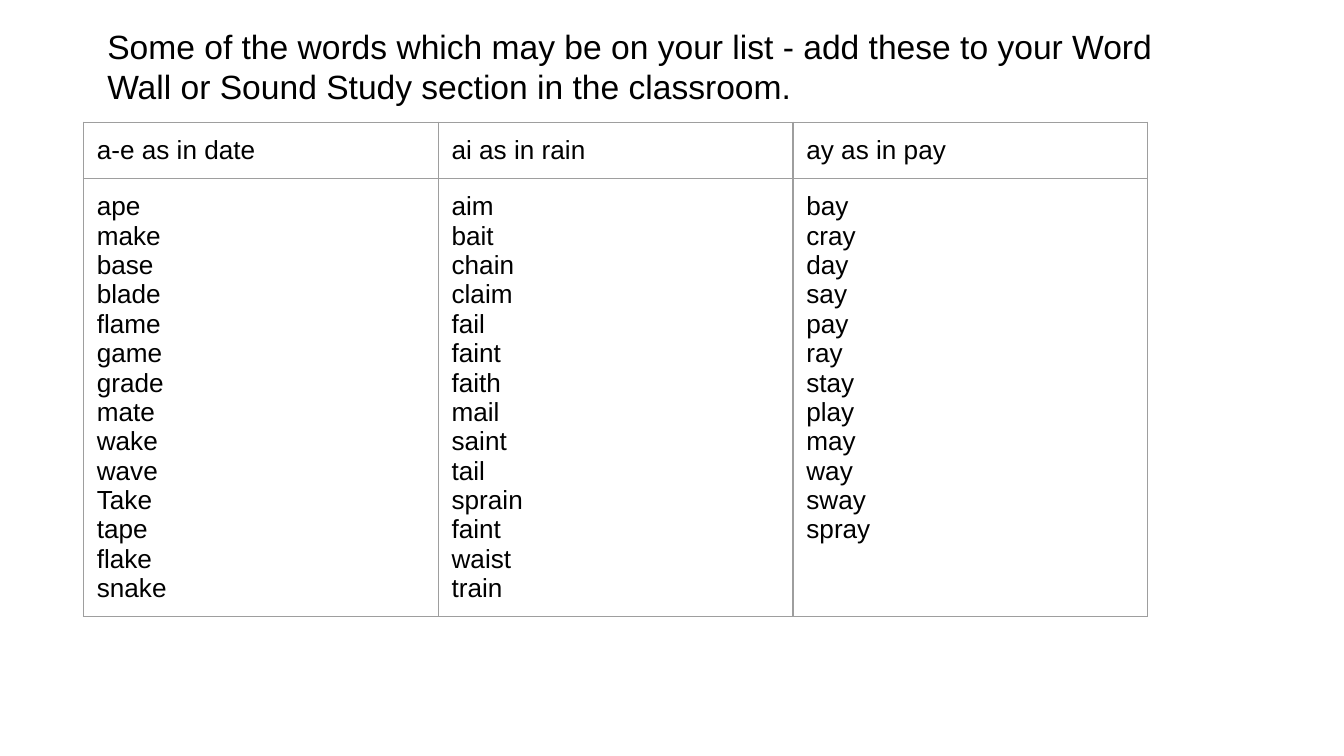
from lxml import etree
from pptx import Presentation
from pptx import util as u
from pptx.dml.color import RGBColor
from pptx.enum import text
from pptx.oxml.ns import qn

COLORS = {"text": "000000", "border": "9E9E9E"}
SLIDE_WIDTH = 10
SLIDE_HEIGHT = SLIDE_WIDTH * 9 / 16
INSET = u.Inches(0.1)
MARGINS = {f"margin_{side}": INSET for side in ("left", "top", "right", "bottom")}

TITLE = ("Some of the words which may be on your list - add these to your "
         "Word Wall or Sound Study section in the classroom.")
WORDS = {
    "a-e as in date": "ape make base blade flame game grade mate wake wave "
                      "Take tape flake snake",
    "ai as in rain": "aim bait chain claim fail faint faith mail saint tail "
                     "sprain faint waist train",
    "ay as in pay": "bay cray day say pay ray stay play may way sway spray",
}


def set_format(obj, values):
    for name, value in values.items():
        setattr(obj, name, value)


def write_lines(tf, lines, size):
    """Put each line in its own paragraph."""
    for i, line in enumerate(lines):
        p = tf.paragraphs[0] if i == 0 else tf.add_paragraph()
        r = p.add_run()
        r.text = line
        set_format(r.font, {"name": "Arial", "size": u.Pt(size)})
        r.font.color.rgb = RGBColor.from_string(COLORS["text"])


def add_borders(cell):
    tc_pr = cell._tc.get_or_add_tcPr()
    for i, side in enumerate(("lnL", "lnR", "lnT", "lnB")):
        ln = etree.Element(qn(f"a:{side}"), w=str(u.Pt(0.75)))
        fill = etree.SubElement(ln, qn("a:solidFill"))
        etree.SubElement(fill, qn("a:srgbClr"), val=COLORS["border"])
        tc_pr.insert(i, ln)  # borders come before the cell fill


def add_title(s):
    box = s.shapes.add_textbox(u.Inches(0.7), u.Inches(0.09),
                               u.Inches(8.26), u.Inches(0.82))
    tf = box.text_frame
    set_format(tf, {**MARGINS, "word_wrap": True,
                    "auto_size": text.MSO_AUTO_SIZE.NONE})
    write_lines(tf, [TITLE], 18)


def add_word_table(s):
    col_width, row_heights = 2.64, (0.42, 3.26)
    table = s.shapes.add_table(
        len(row_heights), len(WORDS), u.Inches(0.62), u.Inches(0.91),
        u.Inches(col_width * len(WORDS)), u.Inches(sum(row_heights))).table
    set_format(table, {"first_row": False, "horz_banding": False})
    for row, height in zip(table.rows, row_heights):
        row.height = u.Inches(height)

    # One column per spelling: heading above its words
    for col, (heading, words) in enumerate(WORDS.items()):
        table.columns[col].width = u.Inches(col_width)
        for row, lines in enumerate(([heading], words.split())):
            cell = table.cell(row, col)
            set_format(cell, MARGINS)
            cell.fill.background()
            add_borders(cell)
            write_lines(cell.text_frame, lines, 14)


def main():
    prs = Presentation()
    set_format(prs, {"slide_width": u.Inches(SLIDE_WIDTH),
                     "slide_height": u.Inches(SLIDE_HEIGHT)})
    s = prs.slides.add_slide(prs.slide_layouts[6])
    add_word_table(s)
    add_title(s)
    prs.save("out.pptx")


if __name__ == "__main__":
    main()
